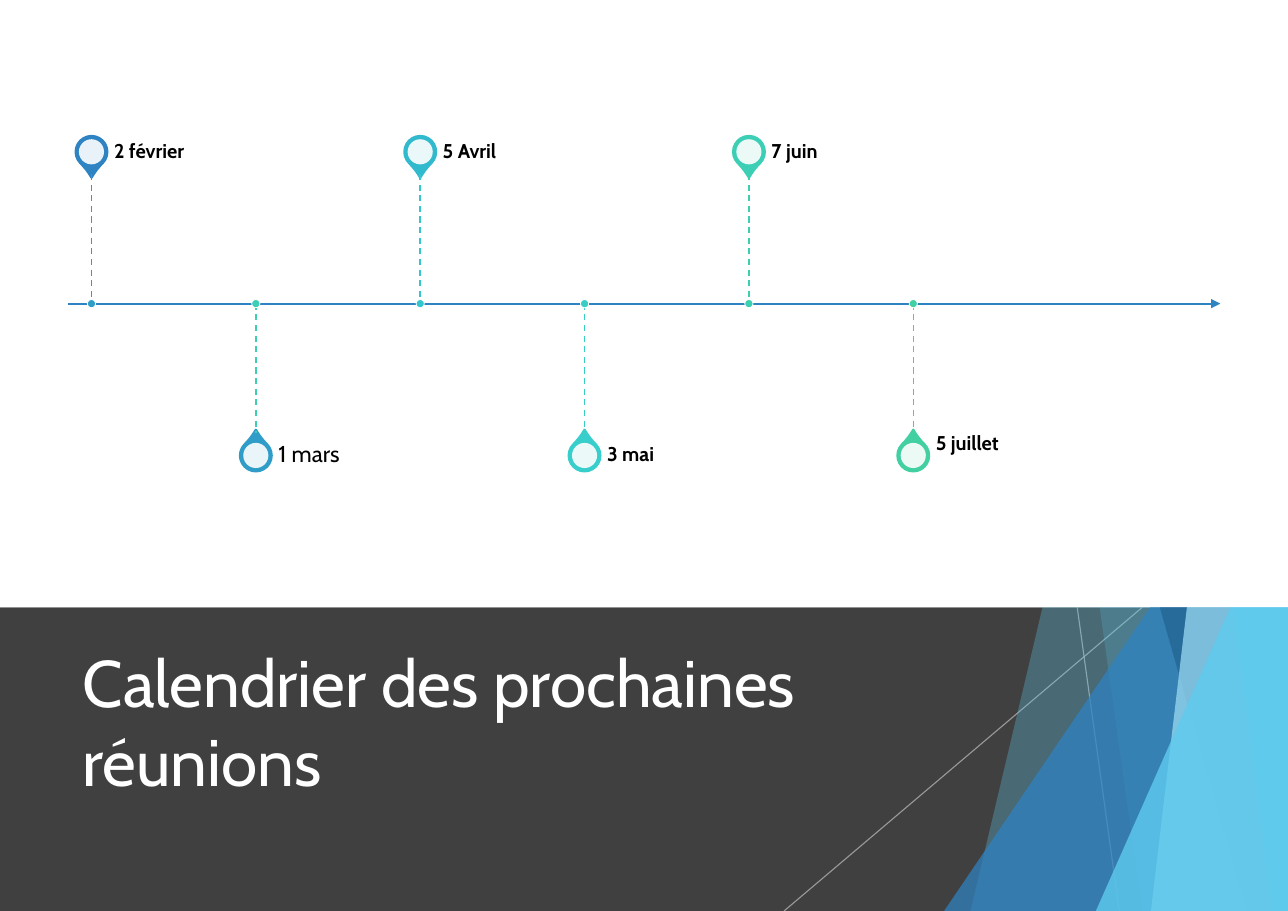
from lxml.etree import SubElement
from pptx import Presentation
from pptx.dml.color import RGBColor
from pptx.enum.dml import MSO_LINE
from pptx.enum.shapes import MSO_CONNECTOR, MSO_SHAPE as SHAPE
from pptx.enum.text import MSO_ANCHOR as ANCHOR, MSO_AUTO_SIZE, PP_ALIGN
from pptx.oxml.ns import qn
from pptx.util import Cm, Pt

FONT = "Cabin"
WHITE = RGBColor(0xFF, 0xFF, 0xFF)
BLACK = RGBColor(0x00, 0x00, 0x00)
CHARCOAL = RGBColor(0x40, 0x40, 0x40)
SILVER = RGBColor(0xBF, 0xBF, 0xBF)
BLUE = RGBColor(0x2E, 0x83, 0xC3)
NAVY = RGBColor(0x22, 0x62, 0x92)
SKY = RGBColor(0x5F, 0xCB, 0xEF)
PALE_SKY = RGBColor(0x9F, 0xE0, 0xF5)
STEEL = RGBColor(0x30, 0x9D, 0xC8)
LAGOON = RGBColor(0x31, 0xB9, 0xCD)
CYAN = RGBColor(0x34, 0xC6, 0xCE)
TURQUOISE = RGBColor(0x37, 0xCE, 0xCB)
TEAL = RGBColor(0x39, 0xCE, 0xC4)
MINT = RGBColor(0x3C, 0xCF, 0xB6)
SEA = RGBColor(0x3D, 0xCF, 0xB2)
GREEN = RGBColor(0x42, 0xD0, 0xA2)

# Lengths in centimetres
PAGE_W, PAGE_H, BAND_TOP = 29.7, 21, 14
AXIS_Y, PIN_DISTANCE = 7, 3.5
FIRST_X, STEP_X = 2.11, 3.79
PIN, HOLE, DOT, PIN_TIP = 0.73, 0.58, 0.19, 0.51

# Date, pin colour, stem colour, text size, bold, vertical anchor
MEETINGS = [
    ("2 février", BLUE, STEEL, 13, True, ANCHOR.MIDDLE),
    ("1 mars", STEEL, MINT, 15, False, ANCHOR.MIDDLE),
    ("5 Avril", LAGOON, CYAN, 13, True, ANCHOR.MIDDLE),
    ("3 mai", TURQUOISE, TEAL, 13, True, ANCHOR.MIDDLE),
    ("7 juin", MINT, SEA, 13, True, ANCHOR.MIDDLE),
    ("5 juillet", GREEN, GREEN, 13, True, ANCHOR.TOP),
]


def set_opacity(fill_parent, percent):
    for color in fill_parent.iter(qn("a:srgbClr")):
        SubElement(color, qn("a:alpha"), val=str(percent * 1000))


def paint(shape, color, opacity=100, outline=None, outline_width=0):
    shape.shadow.inherit = False
    shape.fill.solid()
    shape.fill.fore_color.rgb = color
    if opacity < 100:
        set_opacity(shape._element.spPr, opacity)
    if outline is None:
        shape.line.fill.background()
    else:
        shape.line.color.rgb = outline
        shape.line.width = Pt(outline_width)


def add_block(slide, kind, left, top, width, height, *colors):
    block = slide.shapes.add_shape(kind, Cm(left), Cm(top), Cm(width), Cm(height))
    paint(block, *colors)
    return block


def add_centred(slide, kind, x, y, size, *colors):
    return add_block(slide, kind, x - size / 2, y - size / 2, size, size, *colors)


def add_line(slide, x1, y1, x2, y2, color, width):
    line = slide.shapes.add_connector(
        MSO_CONNECTOR.STRAIGHT, Cm(x1), Cm(y1), Cm(x2), Cm(y2))
    line.line.color.rgb = color
    line.line.width = Pt(width)
    SubElement(line._element.spPr, qn("a:effectLst"))
    return line


def add_ray(slide, x1, x2):
    """Thin translucent line crossing the dark band."""
    ray = add_line(slide, x1, BAND_TOP, x2, PAGE_H, SILVER, 0.75)
    set_opacity(ray._element.spPr, 70)


def add_panel(slide, top_x, bottom_x, color, opacity):
    """Full-height panel with a slanted left side, ending at the right page edge."""
    outline = slide.shapes.build_freeform(Cm(top_x), 0)
    corners = [(PAGE_W, 0), (PAGE_W, PAGE_H), (bottom_x, PAGE_H)]
    outline.add_line_segments([(Cm(x), Cm(y)) for x, y in corners])
    paint(outline.convert_to_shape(), color, opacity)


def add_wedge(slide, left, top, color, opacity):
    """Right-angled triangle in the bottom right corner of the page."""
    wedge = add_block(slide, SHAPE.ISOSCELES_TRIANGLE, left, top,
                      PAGE_W - left, PAGE_H - top, color, opacity)
    wedge.adjustments[0] = 1


def add_band(slide):
    add_block(slide, SHAPE.RECTANGLE, 0, BAND_TOP, PAGE_W, PAGE_H - BAND_TOP, CHARCOAL)
    add_ray(slide, 24.84, 25.81)
    add_ray(slide, 26.34, 18.08)
    add_panel(slide, 27.36, 22.38, SKY, 30)
    add_panel(slide, 23.39, 26.34, SKY, 20)
    add_wedge(slide, 21.77, 9.32, BLUE, 72)
    add_panel(slide, 22.73, 28.75, NAVY, 70)
    add_panel(slide, 29.03, 26.54, PALE_SKY, 70)
    add_panel(slide, 26.64, 29.34, SKY, 65)
    add_wedge(slide, 25.27, 11, SKY, 80)


def add_title(slide):
    title = slide.shapes.title
    slide.shapes._spTree.append(title._element)  # in front of the band
    title.left, title.top, title.width, title.height = (
        Cm(1.65), Cm(14.6), Cm(20.93), Cm(4.04))
    frame = title.text_frame
    frame.text = "Calendrier des prochaines réunions"
    frame.auto_size = MSO_AUTO_SIZE.NONE
    frame.vertical_anchor = ANCHOR.MIDDLE
    heading = frame.paragraphs[0]
    heading.alignment = PP_ALIGN.LEFT
    heading.font.name, heading.font.size = FONT, Pt(43)
    heading.font.color.rgb = WHITE


def add_date(slide, date, x, y, size, bold, anchor):
    label = slide.shapes.add_textbox(Cm(x), Cm(y - 0.52), Cm(6.3), Cm(1.04))
    frame = label.text_frame
    frame.word_wrap = True
    frame.vertical_anchor = anchor
    frame.margin_left = frame.margin_top = frame.margin_bottom = 0
    frame.text = date
    line = frame.paragraphs[0]
    line.line_spacing = 0.9
    line.font.name, line.font.size, line.font.bold = FONT, Pt(size), bold
    line.font.color.rgb = BLACK


def add_meeting(slide, index, date, pin_color, stem_color, *date_style):
    """Pin, date, stem and axis dot; pins alternate above and below the axis."""
    x = FIRST_X + index * STEP_X
    side = 1 if index % 2 else -1
    pin_y = AXIS_Y + side * PIN_DISTANCE
    pin = add_centred(slide, SHAPE.TEAR, x, pin_y, PIN, pin_color, 100, pin_color, 1.5)
    pin.adjustments[0] = 1.15
    pin.rotation = 315 if side > 0 else 135
    add_centred(slide, SHAPE.OVAL, x, pin_y, HOLE, WHITE, 90)
    add_date(slide, date, x + 0.52, pin_y, *date_style)
    ends = sorted([AXIS_Y, pin_y - side * PIN_TIP])
    stem = add_line(slide, x, ends[0], x, ends[1], stem_color, 1)
    stem.line.dash_style = MSO_LINE.DASH
    add_centred(slide, SHAPE.OVAL, x, AXIS_Y, DOT, stem_color, 100, WHITE, 0.5)


def add_timeline(slide):
    add_block(slide, SHAPE.RECTANGLE, 0, 0, PAGE_W, BAND_TOP, WHITE)
    axis = add_line(slide, 1.57, AXIS_Y, 28.14, AXIS_Y, BLUE, 1.5)
    SubElement(axis.line._get_or_add_ln(), qn("a:tailEnd"), type="triangle")
    for index, meeting in enumerate(MEETINGS):
        add_meeting(slide, index, *meeting)


def main():
    deck = Presentation()
    deck.slide_width, deck.slide_height = Cm(PAGE_W), Cm(PAGE_H)
    slide = deck.slides.add_slide(deck.slide_layouts[5])
    add_band(slide)
    add_title(slide)
    add_timeline(slide)
    deck.save("out.pptx")


if __name__ == "__main__":
    main()
